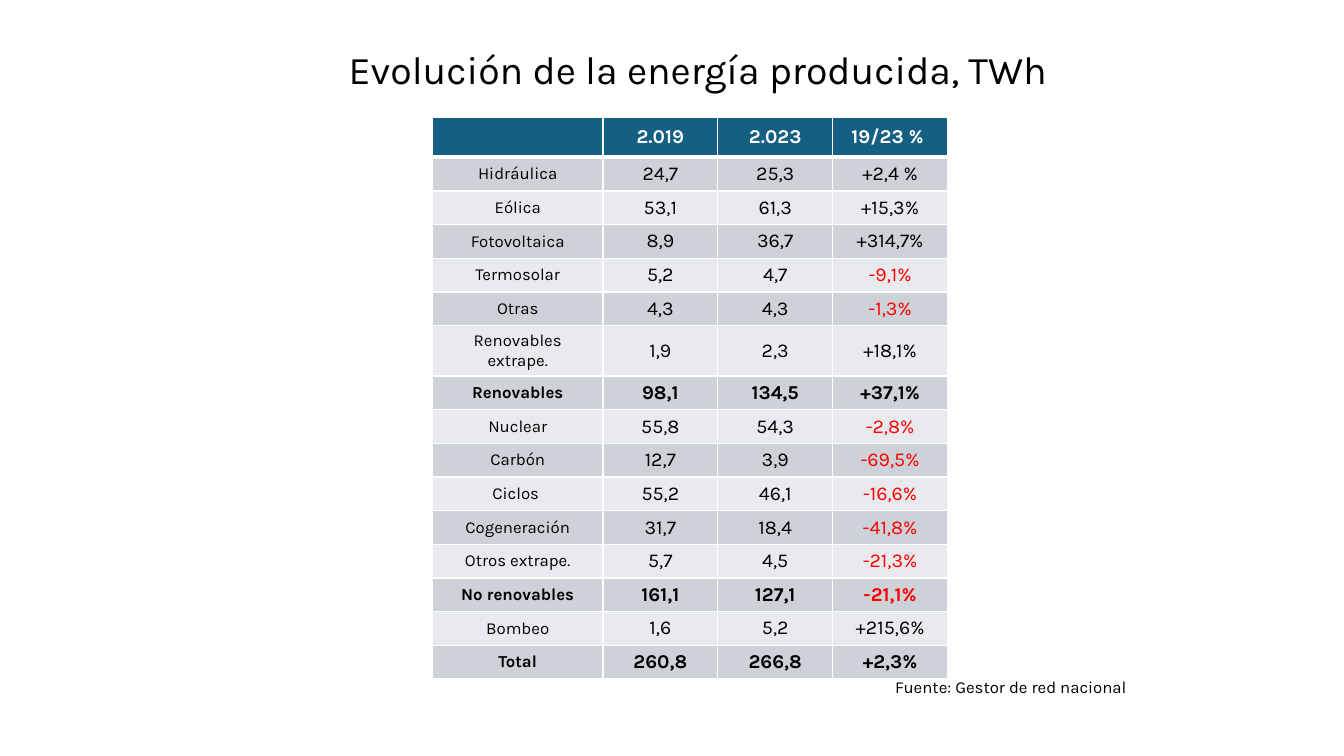
import pptx
import pptx.dml.color
import pptx.enum.text
import pptx.oxml
import pptx.oxml.ns
import pptx.util

RGBColor = pptx.dml.color.RGBColor
BLACK = RGBColor(0x00, 0x00, 0x00)
WHITE = RGBColor(0xFF, 0xFF, 0xFF)
RED = RGBColor(0xFF, 0x00, 0x00)
HEADER_BLUE = RGBColor(0x15, 0x60, 0x82)
BAND_DARK = RGBColor(0xCC, 0xD2, 0xD8)
BAND_LIGHT = RGBColor(0xE8, 0xEA, 0xED)

ALIGN = pptx.enum.text.PP_ALIGN
MIDDLE = pptx.enum.text.MSO_ANCHOR.MIDDLE

presentation = pptx.Presentation()
presentation.slide_width = pptx.util.Inches(13.33)
presentation.slide_height = pptx.util.Inches(7.5)
slide = presentation.slides.add_slide(presentation.slide_layouts[6])

# The slide is a grid of 100 columns by 100 rows.
COLUMN = presentation.slide_width / 100
ROW = presentation.slide_height / 100


def write(text_frame, text, alignment, **font_format):
    paragraph = text_frame.paragraphs[0]
    paragraph.alignment = alignment
    run = paragraph.add_run()
    run.text = text
    run.font.name = "Karla"
    color = font_format.pop("color", BLACK)
    run.font.color.rgb = color
    for name, value in font_format.items():
        setattr(run.font, name, value)
    return paragraph


def add_border(cell, side, points):
    """Add a white border; sides must be added in the order L, R, T, B."""
    line = pptx.oxml.parse_xml(
        f'<a:ln{side} {pptx.oxml.ns.nsdecls("a")} w="{pptx.util.Pt(points)}">'
        f'<a:solidFill><a:srgbClr val="{WHITE}"/></a:solidFill></a:ln{side}>'
    )
    properties = cell._tc.get_or_add_tcPr()
    properties.insert("LRTB".index(side), line)


# Title and source
texts = [
    ("Evolución de la energía producida, TWh", 28, ALIGN.CENTER, MIDDLE,
     (8.78, -0.13, 86.27, 19.33)),
    ("Fuente: Gestor de red nacional", 12, ALIGN.LEFT,
     pptx.enum.text.MSO_ANCHOR.TOP, (65.87, 88.8, 22.58, 4)),
]
for text, size, alignment, anchor, (left, top, width, height) in texts:
    box = slide.shapes.add_textbox(
        round(left * COLUMN), round(top * ROW),
        round(width * COLUMN), round(height * ROW))
    box.text_frame.word_wrap = True
    box.text_frame.vertical_anchor = anchor
    paragraph = write(box.text_frame, text, alignment, size=pptx.util.Pt(size))
    if size == 28:
        paragraph.line_spacing = 0.9

# Energy table
energy_rows = [
    ("", "2.019", "2.023", "19/23 % "),
    ("Hidráulica", "24,7", "25,3", "+2,4 %"),
    ("Eólica", "53,1", "61,3", "+15,3%"),
    ("Fotovoltaica", "8,9", "36,7", "+314,7%"),
    ("Termosolar", "5,2", "4,7", "-9,1%"),
    ("Otras", "4,3", "4,3", "-1,3%"),
    ("Renovables extrape.", "1,9", "2,3", "+18,1%"),
    ("Renovables", "98,1", "134,5", "+37,1%"),
    ("Nuclear", "55,8", "54,3", "-2,8%"),
    ("Carbón", "12,7", "3,9", "-69,5%"),
    ("Ciclos ", "55,2", "46,1", "-16,6%"),
    ("Cogeneración", "31,7", "18,4", "-41,8%"),
    ("Otros extrape.", "5,7", "4,5", "-21,3%"),
    ("No renovables", "161,1", "127,1", "-21,1%"),
    ("Bombeo", "1,6", "5,2", "+215,6%"),
    ("Total", "260,8", "266,8", "+2,3%"),
]
bold_labels = {"", "Renovables", "No renovables", "Total"}
column_widths = [12.68, 8.55, 8.55, 8.55]
row_height = 3.87

table = slide.shapes.add_table(
    len(energy_rows), len(column_widths),
    round(32.18 * COLUMN), round(15.47 * ROW),
    round(sum(column_widths) * COLUMN),
    round(len(energy_rows) * row_height * ROW)).table
for column, width in zip(table.columns, column_widths):
    column.width = round(width * COLUMN)

for row_index, values in enumerate(energy_rows):
    table.rows[row_index].height = round(row_height * ROW)
    is_header = row_index == 0
    if is_header:
        fill_color = HEADER_BLUE
    else:
        fill_color = BAND_DARK if row_index % 2 else BAND_LIGHT
    borders = {"L": 1, "R": 1, "T": 3 if row_index == 1 else 1,
               "B": 3 if is_header else 1}
    for column_index, value in enumerate(values):
        cell = table.cell(row_index, column_index)
        cell.vertical_anchor = MIDDLE
        cell.fill.solid()
        cell.fill.fore_color.rgb = fill_color
        for side, points in borders.items():
            add_border(cell, side, points)
        if is_header:
            color = WHITE
        else:
            color = RED if value.startswith("-") else BLACK
        if value:
            write(cell.text_frame, value, ALIGN.CENTER, color=color,
                  size=pptx.util.Pt(14 if column_index else 12),
                  bold=values[0] in bold_labels)

presentation.save("out.pptx")
